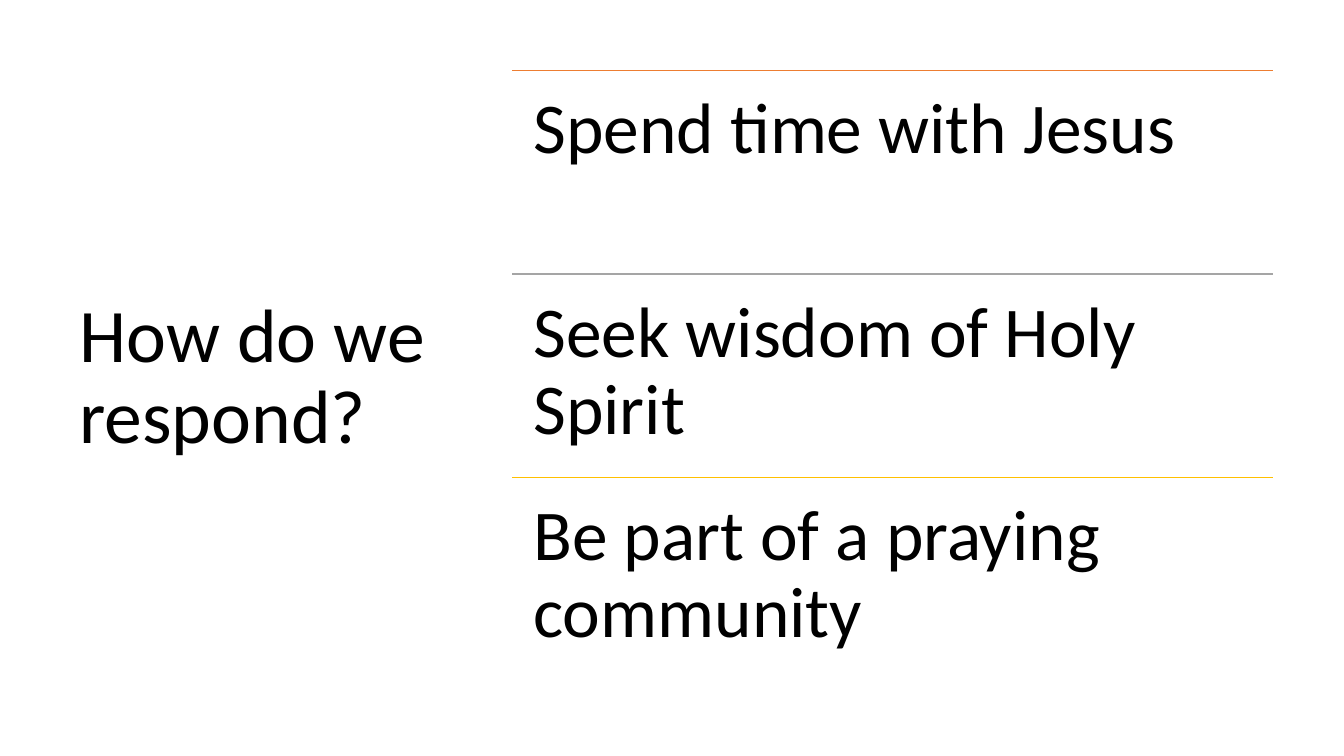
"""Build a slide with a question on the left and three ruled answers on the right."""
from lxml.etree import SubElement
from pptx import Presentation
from pptx.dml.color import RGBColor
from pptx.enum.shapes import MSO_CONNECTOR
from pptx.enum.text import MSO_ANCHOR
from pptx.oxml.ns import qn
from pptx.util import Inches, Pt

QUESTION = "How do we respond?"
ANSWERS = [
    ("Spend time with Jesus", "ED7D31"),
    ("Seek wisdom of Holy Spirit", "A5A5A5"),
    ("Be part of a praying community", "FFC000"),
]
FONT = "Calibri"
TEXT_COLOR = "000000"
TOP = 0.7
ANSWER_LEFT, ANSWER_WIDTH, ANSWER_HEIGHT = 5.08, 7.55, 2.02


def color(hex_code):
    return RGBColor.from_string(hex_code)


def add_text(slide, text, box, size, insets, anchor):
    frame = slide.shapes.add_textbox(*map(Inches, box)).text_frame
    frame.word_wrap = True
    frame.vertical_anchor = anchor
    frame.margin_left = frame.margin_right = Inches(insets[0])
    frame.margin_top = frame.margin_bottom = Inches(insets[1])
    frame.text = text
    paragraph = frame.paragraphs[0]
    paragraph.line_spacing = 0.9
    font = paragraph.runs[0].font
    font.name, font.size = FONT, Pt(size)
    font.color.rgb = color(TEXT_COLOR)


def add_rule(slide, top, hex_code):
    rule = slide.shapes.add_connector(
        MSO_CONNECTOR.STRAIGHT, Inches(ANSWER_LEFT), Inches(top),
        Inches(ANSWER_LEFT + ANSWER_WIDTH), Inches(top))
    rule.line.color.rgb = color(hex_code)
    rule.line.width = Pt(1)
    SubElement(rule._element.spPr, qn("a:effectLst"))


def main():
    deck = Presentation()
    deck.slide_width, deck.slide_height = Inches(13.33), Inches(7.5)
    slide = deck.slides.add_slide(deck.slide_layouts[6])
    add_text(slide, QUESTION, (0.69, TOP, 3.74, 6.11), 54, (0.1, 0.05), MSO_ANCHOR.MIDDLE)
    for row, (answer, rule_color) in enumerate(ANSWERS):
        top = TOP + row * ANSWER_HEIGHT
        add_rule(slide, top, rule_color)
        add_text(slide, answer, (ANSWER_LEFT, top, ANSWER_WIDTH, ANSWER_HEIGHT),
                 51, (0.21, 0.21), MSO_ANCHOR.TOP)
    deck.save("out.pptx")


if __name__ == "__main__":
    main()
